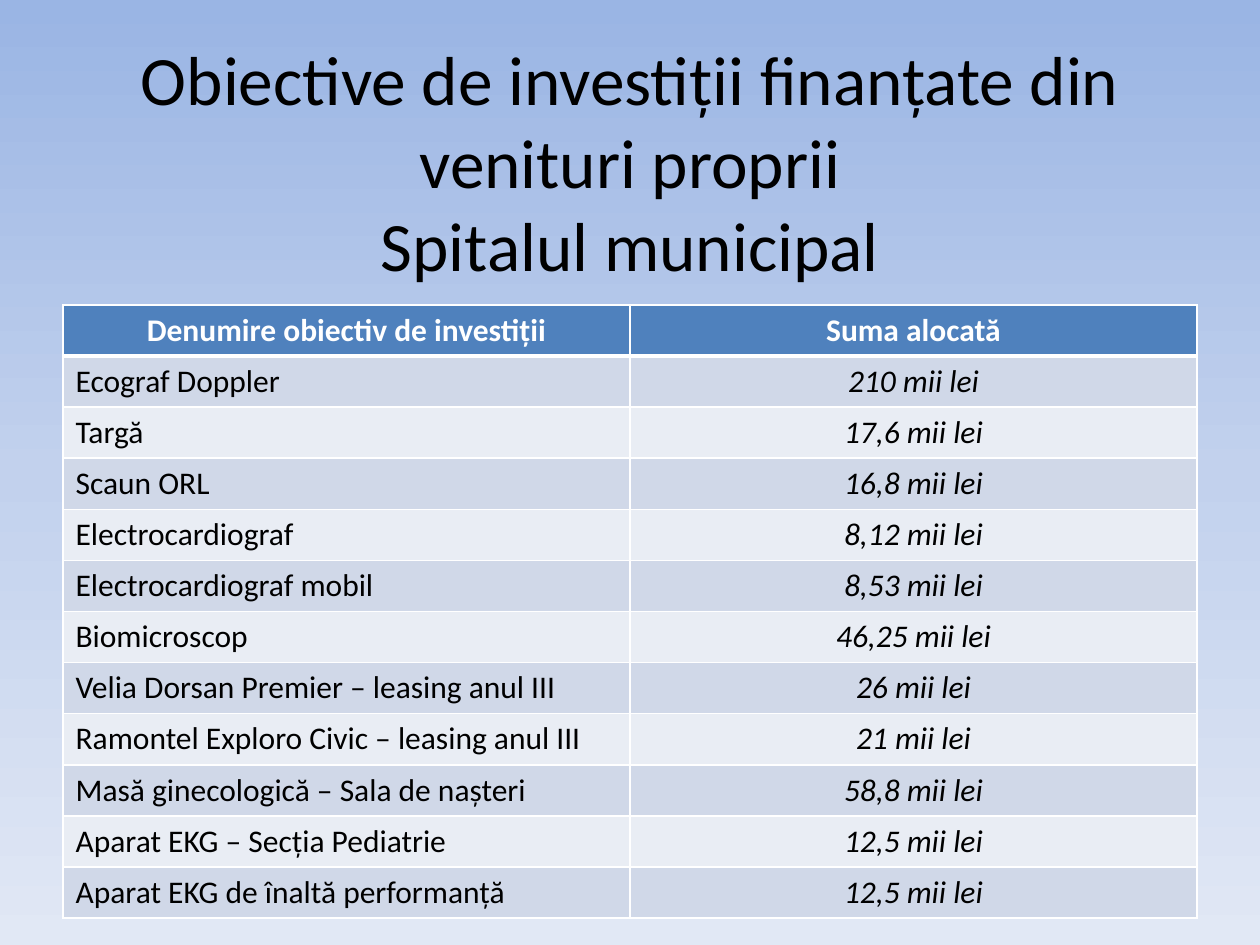
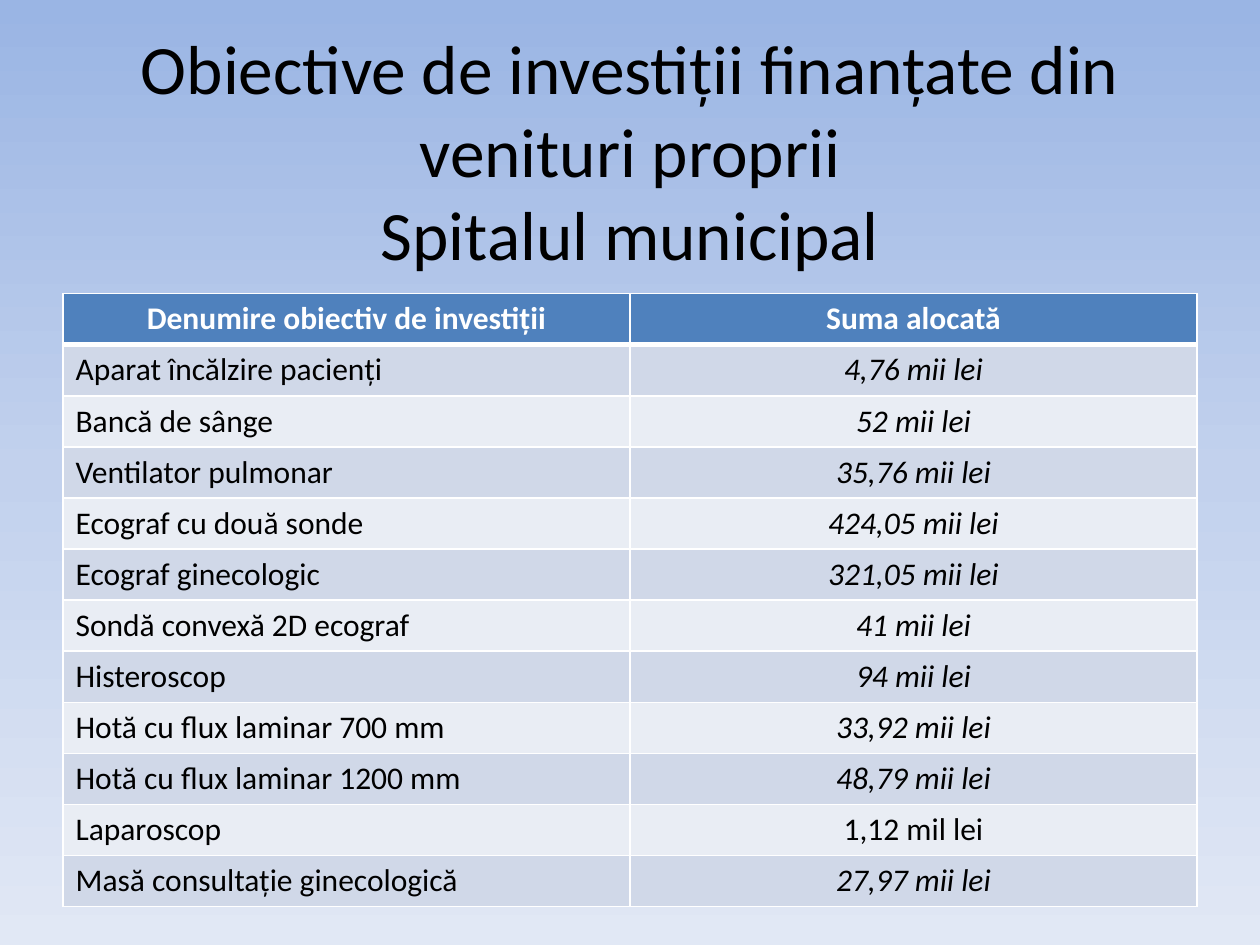
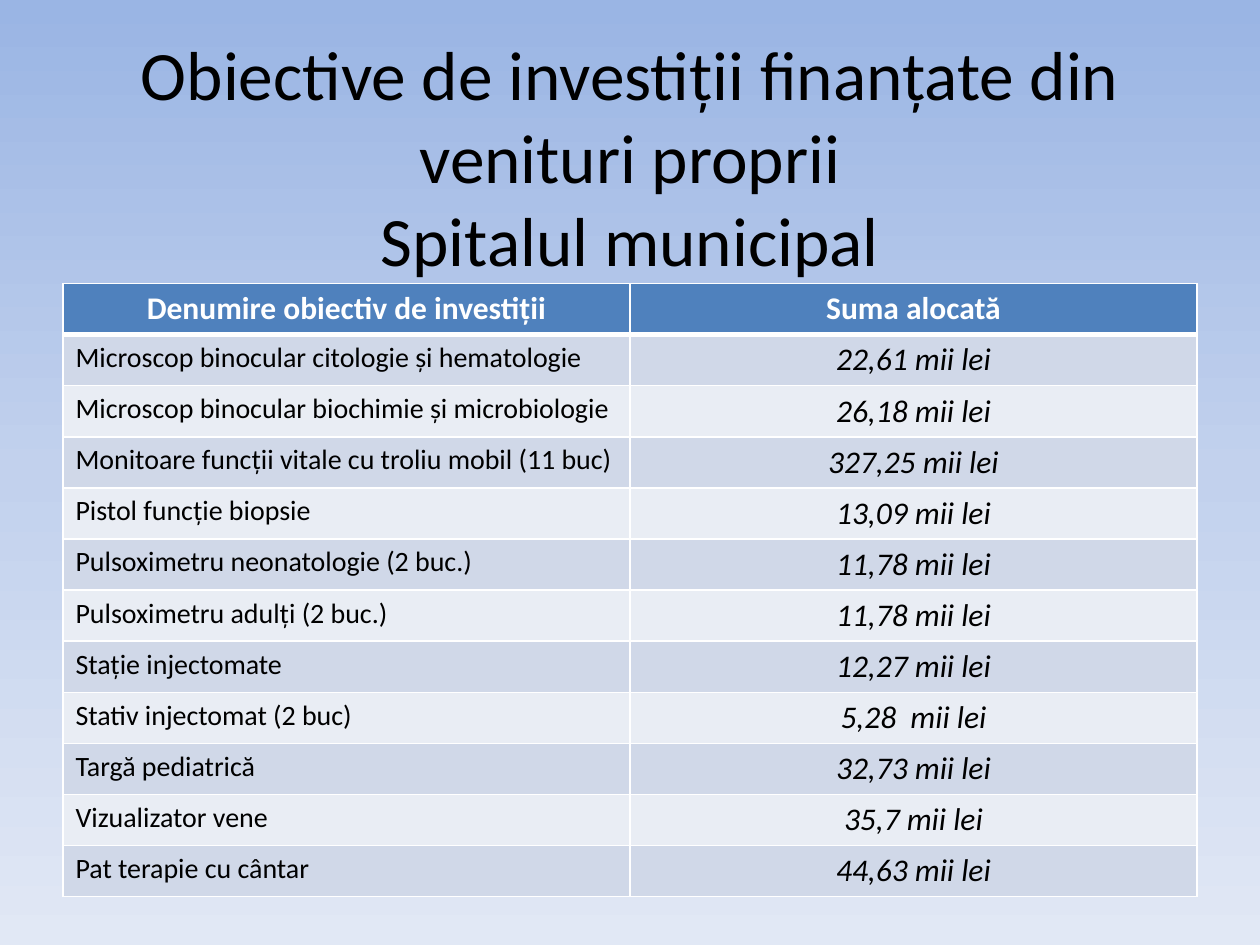
from copy import deepcopy

from lxml import etree
from pptx import Presentation
from pptx import util as u
from pptx.dml.color import RGBColor
from pptx.enum import text
from pptx.oxml.ns import qn

BLACK = RGBColor(0x00, 0x00, 0x00)
WHITE = RGBColor(0xFF, 0xFF, 0xFF)
HEADER_BLUE = RGBColor(0x4F, 0x81, 0xBD)
BAND_DARK = RGBColor(0xD0, 0xD8, 0xE8)
BAND_LIGHT = RGBColor(0xE9, 0xED, 0xF4)
SKY_TOP = RGBColor(0x9A, 0xB5, 0xE4)
SKY_MIDDLE = RGBColor(0xC2, 0xD1, 0xED)
SKY_BOTTOM = RGBColor(0xE1, 0xE8, 0xF5)

FONT = "Calibri"
LEFT, WIDTH = u.Inches(0.5), u.Inches(9)
TITLE_TOP, TABLE_HEIGHT = u.Inches(0.3), u.Inches(4.87)
TITLE = "Obiective de investiții finanțate din venituri proprii\vSpitalul municipal"
HEADER = ("Denumire obiectiv de investiții", "Suma alocată")
JUSTIFY, LEFT_ALIGN = text.PP_ALIGN.JUSTIFY, text.PP_ALIGN.LEFT

SLIDES = [
    (1.95, 2.42, 18, JUSTIFY, [
        ("Ecograf Doppler", "210 mii lei"),
        ("Targă", "17,6 mii lei"),
        ("Scaun ORL", "16,8 mii lei"),
        ("Electrocardiograf", "8,12 mii lei"),
        ("Electrocardiograf mobil", "8,53 mii lei"),
        ("Biomicroscop", "46,25 mii lei"),
        ("Velia Dorsan Premier – leasing anul III", "26 mii lei"),
        ("Ramontel Exploro Civic – leasing anul III", "21 mii lei"),
        ("Masă ginecologică – Sala de nașteri", "58,8 mii lei"),
        ("Aparat EKG – Secția Pediatrie", "12,5 mii lei"),
        ("Aparat EKG de înaltă performanță", "12,5 mii lei"),
    ]),
    (1.78, 2.33, 18, JUSTIFY, [
        ("Aparat încălzire pacienți", "4,76 mii lei"),
        ("Bancă de sânge", "52 mii lei"),
        ("Ventilator pulmonar", "35,76 mii lei"),
        ("Ecograf cu două sonde", "424,05 mii lei"),
        ("Ecograf ginecologic", "321,05 mii lei"),
        ("Sondă convexă 2D ecograf", "41 mii lei"),
        ("Histeroscop", "94 mii lei"),
        ("Hotă cu flux laminar 700 mm", "33,92 mii lei"),
        ("Hotă cu flux laminar 1200 mm", "48,79 mii lei"),
        ("Laparoscop", "1,12 mil lei"),
        ("Masă consultație ginecologică", "27,97 mii lei"),
    ]),
    (1.87, 2.25, 16, LEFT_ALIGN, [
        ("Microscop binocular citologie și hematologie", "22,61 mii lei"),
        ("Microscop binocular biochimie și microbiologie", "26,18 mii lei"),
        ("Monitoare funcții vitale cu troliu mobil (11 buc)", "327,25 mii lei"),
        ("Pistol funcție biopsie", "13,09 mii lei"),
        ("Pulsoximetru neonatologie (2 buc.)", "11,78 mii lei"),
        ("Pulsoximetru adulți (2 buc.)", "11,78 mii lei"),
        ("Stație injectomate", "12,27 mii lei"),
        ("Stativ injectomat (2 buc)", "5,28  mii lei"),
        ("Targă pediatrică", "32,73 mii lei"),
        ("Vizualizator vene", "35,7 mii lei"),
        ("Pat terapie cu cântar", "44,63 mii lei"),
    ]),
]


def style_paragraph(paragraph, size, color, alignment, bold=False, italic=False):
    paragraph.alignment = alignment
    font = paragraph.font
    font.name, font.size, font.color.rgb = FONT, u.Pt(size), color
    font.bold, font.italic = bold, italic


def add_borders(cell, top, bottom):
    properties = cell._tc.get_or_add_tcPr()
    for side, points in (("L", 1), ("R", 1), ("T", top), ("B", bottom)):
        line = etree.SubElement(properties, qn(f"a:ln{side}"), w=str(u.Pt(points)))
        fill = etree.SubElement(line, qn("a:solidFill"))
        etree.SubElement(fill, qn("a:srgbClr"), val=str(WHITE))


presentation = Presentation()
presentation.slide_width, presentation.slide_height = u.Inches(10), u.Inches(7.5)

master = presentation.slide_master
background = master.background.fill
background.gradient()
background.gradient_angle = 270
stop_list = master.element.find(".//" + qn("a:gsLst"))
stop_list.insert(1, deepcopy(stop_list[0]))
sky = ((0, SKY_TOP), (0.5, SKY_MIDDLE), (1, SKY_BOTTOM))
for stop, (position, color) in zip(background.gradient_stops, sky):
    stop.position, stop.color.rgb = position, color

for title_height, table_top, name_size, name_alignment, items in SLIDES:
    slide = presentation.slides.add_slide(presentation.slide_layouts[6])

    title = slide.shapes.add_textbox(LEFT, TITLE_TOP, WIDTH, u.Inches(title_height))
    title.text_frame.word_wrap = True
    title.text_frame.vertical_anchor = text.MSO_ANCHOR.MIDDLE
    title.text_frame.text = TITLE
    style_paragraph(title.text_frame.paragraphs[0], 39.6, BLACK, text.PP_ALIGN.CENTER)

    rows = [HEADER] + items
    table = slide.shapes.add_table(
        len(rows), 2, LEFT, u.Inches(table_top), WIDTH, TABLE_HEIGHT
    ).table
    table.horz_banding = False
    for row_index, row in enumerate(rows):
        is_header = row_index == 0
        band = BAND_DARK if row_index % 2 else BAND_LIGHT
        for column, value in enumerate(row):
            cell = table.cell(row_index, column)
            cell.text = value
            is_name = column == 0 and not is_header
            style_paragraph(
                cell.text_frame.paragraphs[0],
                name_size if is_name else 18,
                WHITE if is_header else BLACK,
                name_alignment if is_name else text.PP_ALIGN.CENTER,
                bold=is_header,
                italic=column == 1 and not is_header and value != "1,12 mil lei",
            )
            add_borders(cell, 3 if row_index == 1 else 1, 3 if is_header else 1)
            cell.fill.solid()
            cell.fill.fore_color.rgb = HEADER_BLUE if is_header else band

presentation.save("out.pptx")
